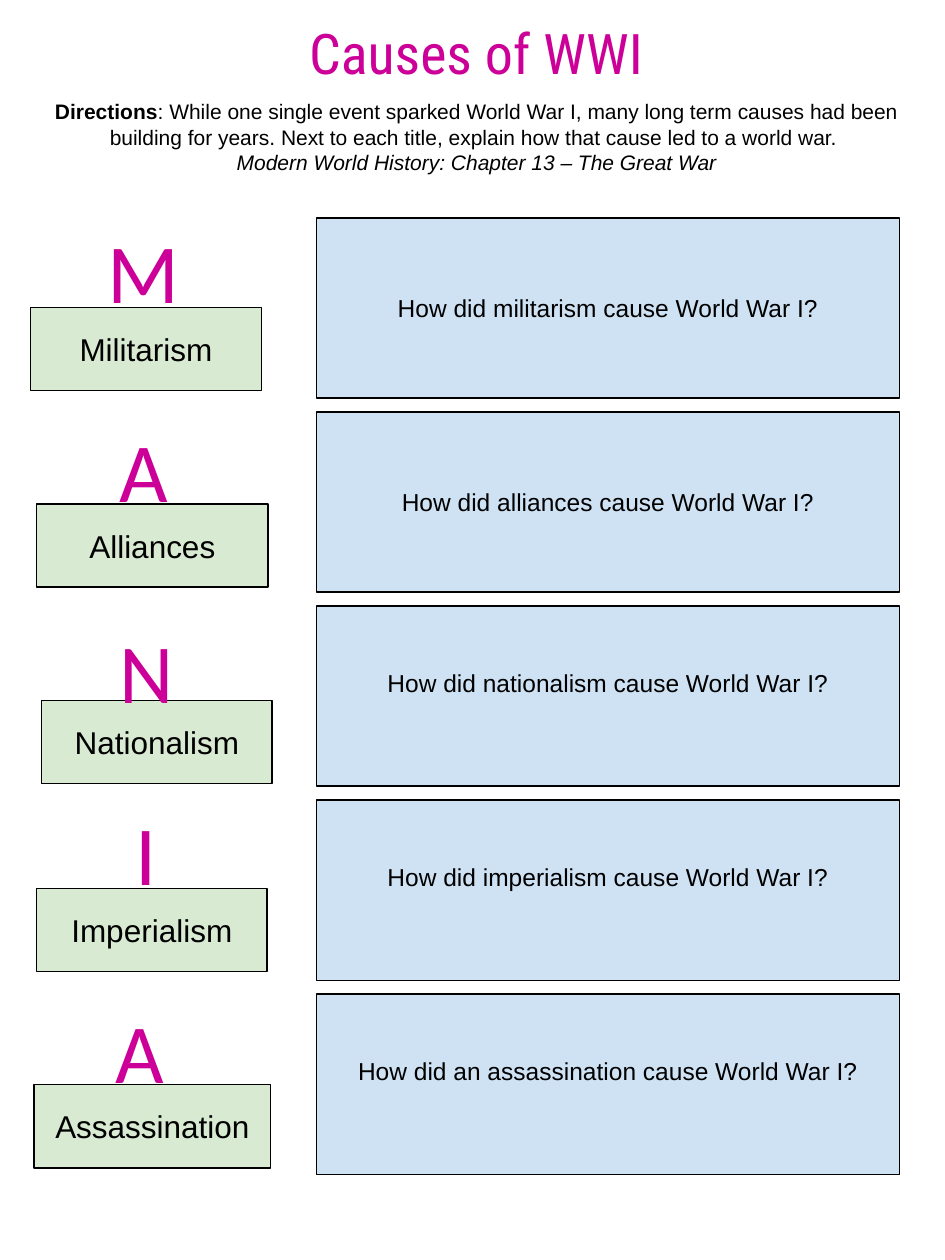
from dataclasses import dataclass

from pptx import Presentation
from pptx.dml.color import RGBColor
from pptx.enum.shapes import MSO_SHAPE
from pptx.enum.text import MSO_ANCHOR, PP_ALIGN
from pptx.util import Inches, Pt

WIDTH, HEIGHT = Inches(7.5), Inches(10)
FIRST_ROW, ROW_STEP = 17.3, 15.4
ANSWER_LEFT, ANSWER_WIDTH, ANSWER_HEIGHT = 33.47, 61.73, 14.3
LABEL_HEIGHT = 6.6


@dataclass(frozen=True)
class Theme:
    accent: RGBColor = RGBColor(0xCC, 0x00, 0x99)
    ink: RGBColor = RGBColor(0x00, 0x00, 0x00)
    label_fill: RGBColor = RGBColor(0xD9, 0xEA, 0xD3)
    answer_fill: RGBColor = RGBColor(0xCF, 0xE2, 0xF3)
    title_font: str = "Roboto Condensed"
    letter_font: str = "Calibri"
    body_font: str = "Arial"
    title_size: int = 32
    letter_size: int = 48
    label_size: int = 18
    answer_size: int = 14
    directions_size: int = 12


@dataclass(frozen=True)
class Cause:
    name: str
    question: str
    label: tuple
    letter: tuple
    raised: bool = False


THEME = Theme()

# label: left, top in row, width; letter: left, top in row, width, height
CAUSES = [
    Cause("Militarism", "How did militarism cause World War I?",
          (3.2, 7.1, 24.5), (4.13, -0.4, 22.13, 5.7)),
    Cause("Alliances", "How did alliances cause World War I?",
          (3.87, 7.3, 24.5), (4.13, 0, 22.13, 7.9)),
    Cause("Nationalism", "How did nationalism cause World War I?",
          (4.4, 7.5, 24.4), (4.4, 0.6, 22.13, 5.7), True),
    Cause("Imperialism", "How did imperialism cause World War I?",
          (3.87, 7.0, 24.4), (4.4, -0.4, 22.13, 5.7), True),
    Cause("Assassination", "How did an assassination cause World War I?",
          (3.6, 7.2, 25.07), (4.4, -0.1, 20.8, 8.5), True),
]


def place(left, top, width, height):
    return (int(WIDTH * left / 100), int(HEIGHT * top / 100),
            int(WIDTH * width / 100), int(HEIGHT * height / 100))


def style_text(box, font, size, color, anchor, inset):
    frame = box.text_frame
    frame.word_wrap = True
    frame.vertical_anchor = anchor
    frame.margin_left = frame.margin_right = Inches(0.1)
    frame.margin_top = frame.margin_bottom = Inches(inset)
    para = frame.paragraphs[0]
    para.alignment = PP_ALIGN.CENTER
    para.font.name = font
    para.font.size = Pt(size)
    para.font.color.rgb = color
    return para


def add_heading(page, text, area, font, size):
    box = page.shapes.add_textbox(*place(*area))
    para = style_text(box, font, size, THEME.accent, MSO_ANCHOR.TOP, 0.05)
    para.add_run().text = text


def add_panel(page, text, area, fill, size):
    box = page.shapes.add_shape(MSO_SHAPE.RECTANGLE, *place(*area))
    box.shadow.inherit = False
    box.fill.solid()
    box.fill.fore_color.rgb = fill
    box.line.color.rgb = THEME.ink
    box.line.width = Pt(0.75)
    para = style_text(box, THEME.body_font, size, THEME.ink, MSO_ANCHOR.MIDDLE, 0.1)
    para.add_run().text = text
    return box


def add_directions(page):
    box = page.shapes.add_textbox(*place(2.4, 7.2, 96.13, 7.3))
    para = style_text(box, THEME.body_font, THEME.directions_size, THEME.ink,
                      MSO_ANCHOR.MIDDLE, 0.1)
    lead = para.add_run()
    lead.text = "Directions"
    lead.font.bold = True
    para.add_run().text = (
        ": While one single event sparked World War I, many long term causes "
        "had been building for years. Next to each title, explain how that "
        "cause led to a world war. ")
    para.add_line_break()
    chapter = para.add_run()
    chapter.text = "Modern World History: Chapter 13 – The Great War"
    chapter.font.italic = True


def add_cause(page, cause, top):
    left, offset, width = cause.label
    add_panel(page, cause.name, (left, top + offset, width, LABEL_HEIGHT),
              THEME.label_fill, THEME.label_size)
    left, offset, width, height = cause.letter
    add_heading(page, cause.name[0], (left, top + offset, width, height),
                THEME.letter_font, THEME.letter_size)
    answer = add_panel(page, cause.question,
                       (ANSWER_LEFT, top, ANSWER_WIDTH, ANSWER_HEIGHT),
                       THEME.answer_fill, THEME.answer_size)
    if cause.raised:
        answer.text_frame.margin_bottom = Inches(0.32)


def main():
    deck = Presentation()
    deck.slide_width, deck.slide_height = WIDTH, HEIGHT
    page = deck.slides.add_slide(deck.slide_layouts[6])
    add_heading(page, "Causes of WWI", (5.73, 1, 89.33, 5.7),
                THEME.title_font, THEME.title_size)
    add_directions(page)
    for row, cause in enumerate(CAUSES):
        add_cause(page, cause, FIRST_ROW + row * ROW_STEP)
    deck.save("out.pptx")


if __name__ == "__main__":
    main()
